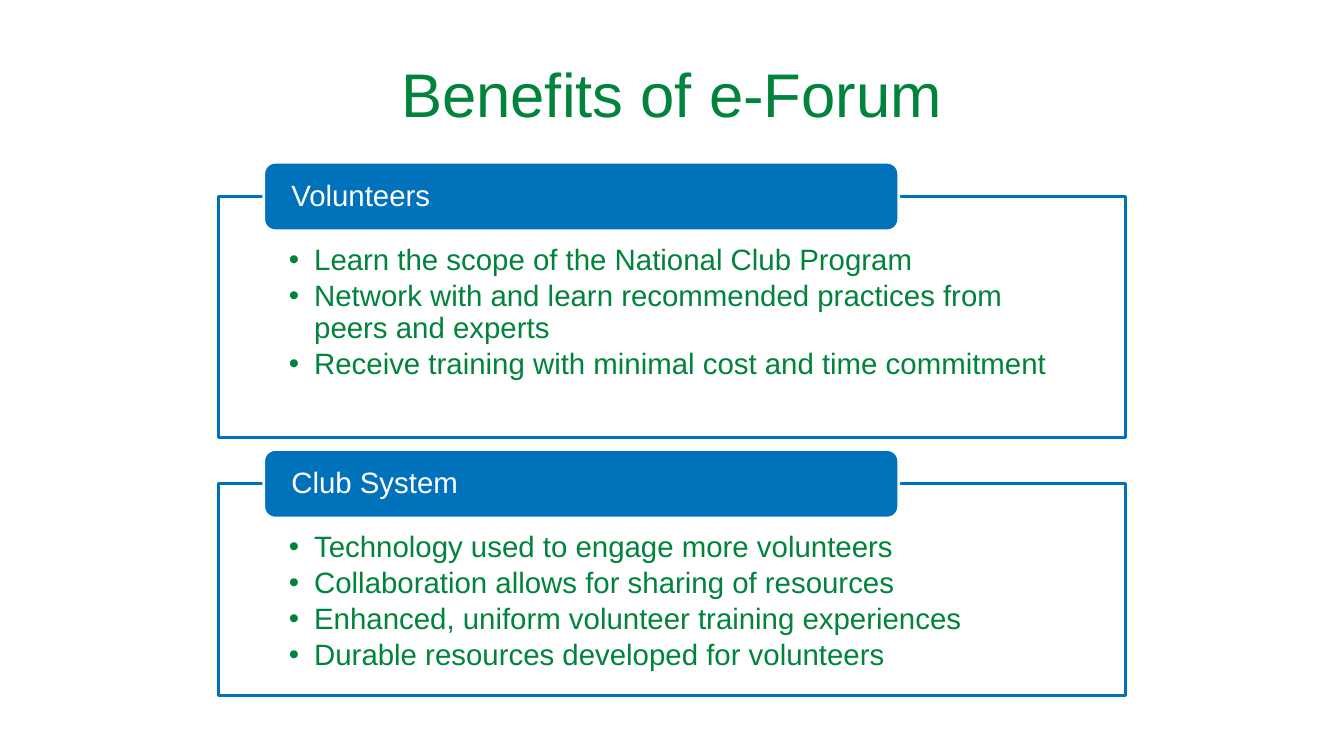
from dataclasses import dataclass

from lxml.etree import SubElement
from pptx import Presentation
from pptx.dml.color import RGBColor
from pptx.enum.shapes import MSO_SHAPE as Preset
from pptx.enum.text import MSO_ANCHOR as Anchor, PP_ALIGN as Align
from pptx.oxml.ns import qn
from pptx.shapes.autoshape import Shape
from pptx.slide import Slide
from pptx.text.text import TextFrame, _Paragraph as Paragraph
from pptx.util import Inches, Pt

SLIDE_WIDTH, SLIDE_HEIGHT = Inches(13.33), Inches(7.5)
COLUMN, ROW = SLIDE_WIDTH / 80, SLIDE_HEIGHT / 75

GREEN, BLUE, WHITE = "00833B", "0072BC", "FFFFFF"
FONT = "Arial"
BODY_SIZE, TITLE_SIZE = 21, 44

PANEL_LEFT, PANEL_COLUMNS = 13, 54
TAB_LEFT, TAB_COLUMNS = 15.7, 37.8
TAB_ROWS, TAB_RISE = 6.8, 3.4


@dataclass(frozen=True)
class Panel:
    heading: str
    top: float
    rows: float
    benefits: tuple[str, ...]


PANELS = (
    Panel("Volunteers", 19.5, 23.9, (
        "Learn the scope of the National Club Program",
        "Network with and learn recommended practices from peers and experts",
        "Receive training with minimal cost and time commitment",
    )),
    Panel("Club System", 48, 21, (
        "Technology used to engage more volunteers",
        "Collaboration allows for sharing of resources",
        "Enhanced, uniform volunteer training experiences",
        "Durable resources developed for volunteers",
    )),
)


def colour(value: str) -> RGBColor:
    return RGBColor.from_string(value)


def place(left: float, top: float, columns: float, rows: float) -> tuple[int, ...]:
    """Turn grid columns and rows into slide lengths."""
    return (round(left * COLUMN), round(top * ROW),
            round(columns * COLUMN), round(rows * ROW))


def set_font(paragraph: Paragraph, size: float, value: str) -> None:
    font = paragraph.font
    font.name, font.size = FONT, Pt(size)
    font.color.rgb = colour(value)


def set_frame(frame: TextFrame, anchor: Anchor, side: float,
              top: float, bottom: float) -> None:
    """Wrap the text and set its anchor and its margins in inches."""
    frame.word_wrap = True
    frame.vertical_anchor = anchor
    frame.margin_left = frame.margin_right = Inches(side)
    frame.margin_top, frame.margin_bottom = Inches(top), Inches(bottom)


def add_bullet(paragraph: Paragraph) -> None:
    properties = paragraph._p.get_or_add_pPr()
    properties.set("marL", str(Inches(0.25)))
    properties.set("indent", str(-Inches(0.25)))
    bullet_colour = SubElement(properties, qn("a:buClr"))
    SubElement(bullet_colour, qn("a:srgbClr"), val=GREEN)
    SubElement(properties, qn("a:buFont"), typeface=FONT)
    SubElement(properties, qn("a:buChar"), char="•")


def add_box(slide: Slide, preset: Preset, position: tuple[int, ...],
            fill: str, line: str) -> Shape:
    box = slide.shapes.add_shape(preset, *position)
    box.shadow.inherit = False
    box.fill.solid()
    box.fill.fore_color.rgb = colour(fill)
    box.line.color.rgb = colour(line)
    box.line.width = Pt(2)
    return box


def add_title(slide: Slide, text: str) -> None:
    title = slide.shapes.add_textbox(*place(PANEL_LEFT, 3, PANEL_COLUMNS, 12.5))
    set_frame(title.text_frame, Anchor.MIDDLE, 0.1, 0.05, 0.05)
    paragraph = title.text_frame.paragraphs[0]
    paragraph.text = text
    paragraph.alignment = Align.CENTER
    set_font(paragraph, TITLE_SIZE, GREEN)


def add_benefits(slide: Slide, panel: Panel) -> None:
    position = place(PANEL_LEFT, panel.top, PANEL_COLUMNS, panel.rows)
    box = add_box(slide, Preset.RECTANGLE, position, WHITE, BLUE)
    fill_colour = box._element.spPr.find(qn("a:solidFill"))[0]
    SubElement(fill_colour, qn("a:alpha"), val="89000")
    frame = box.text_frame
    set_frame(frame, Anchor.TOP, 0.7, 0.48, 0.16)
    for index, benefit in enumerate(panel.benefits):
        paragraph = frame.add_paragraph() if index else frame.paragraphs[0]
        paragraph.text = benefit
        paragraph.alignment = Align.LEFT
        paragraph.line_spacing = 0.9
        if index:
            paragraph.space_before = Pt(3.1)
        add_bullet(paragraph)
        set_font(paragraph, BODY_SIZE, GREEN)


def add_heading_tab(slide: Slide, panel: Panel) -> None:
    position = place(TAB_LEFT, panel.top - TAB_RISE, TAB_COLUMNS, TAB_ROWS)
    tab = add_box(slide, Preset.ROUNDED_RECTANGLE, position, BLUE, WHITE)
    set_frame(tab.text_frame, Anchor.MIDDLE, 0.24, 0, 0)
    paragraph = tab.text_frame.paragraphs[0]
    paragraph.text = panel.heading
    paragraph.alignment = Align.LEFT
    paragraph.line_spacing = 0.9
    set_font(paragraph, BODY_SIZE, WHITE)


def main() -> None:
    presentation = Presentation()
    presentation.slide_width, presentation.slide_height = SLIDE_WIDTH, SLIDE_HEIGHT
    slide = presentation.slides.add_slide(presentation.slide_layouts[6])
    add_title(slide, "Benefits of e-Forum")
    for panel in PANELS:
        add_benefits(slide, panel)
        add_heading_tab(slide, panel)
    presentation.save("out.pptx")


if __name__ == "__main__":
    main()
